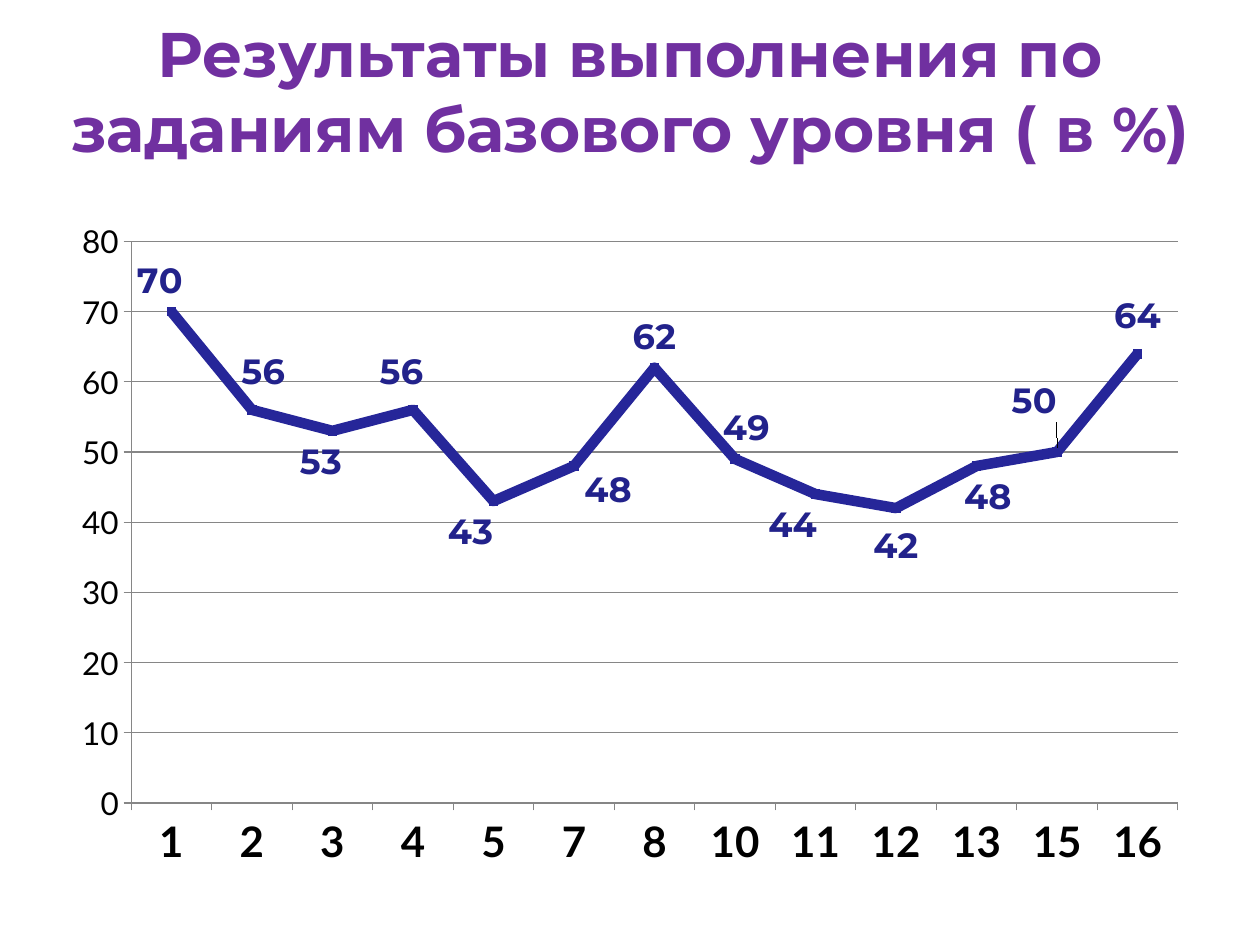
from lxml import etree
from pptx import Presentation
from pptx.chart.data import CategoryChartData
from pptx.dml.color import RGBColor
from pptx.enum.chart import XL_CHART_TYPE, XL_LABEL_POSITION, XL_TICK_MARK
from pptx.enum.text import MSO_ANCHOR, PP_ALIGN
from pptx.oxml.ns import qn
from pptx.util import Inches, Pt

LINE = XL_CHART_TYPE.LINE
ABOVE, BELOW = XL_LABEL_POSITION.ABOVE, XL_LABEL_POSITION.BELOW
OUTSIDE = XL_TICK_MARK.OUTSIDE
MIDDLE, CENTER = MSO_ANCHOR.MIDDLE, PP_ALIGN.CENTER
WIDE, HIGH = Inches(10), Inches(7.5)

TITLE = "Результаты выполнения по заданиям базового уровня ( в %)"
HEAD = {"name": "Montserrat", "size": Pt(36), "bold": True}
BASE = {"name": "Lato", "size": Pt(18), "bold": False}
TASK = {"name": "Lato", "size": Pt(24), "bold": True}
MARK = {"name": "Montserrat", "size": Pt(20), "bold": True}
PLOT = {"x": 0.063, "y": 0.05, "w": 0.917, "h": 0.837}

SCORES = [
    ("1", 70, ABOVE, -0.01, 0),
    ("2", 56, ABOVE, 0.01, -0.01),
    ("3", 53, BELOW, -0.01, 0),
    ("4", 56, ABOVE, -0.01, -0.01),
    ("5", 43, BELOW, -0.02, 0),
    ("7", 48, BELOW, 0.03, -0.01),
    ("8", 62, ABOVE, 0, 0),
    ("10", 49, ABOVE, 0.01, 0),
    ("11", 44, BELOW, -0.02, 0),
    ("12", 42, BELOW, 0, 0.01),
    ("13", 48, BELOW, 0.01, 0),
    ("15", 50, ABOVE, -0.02, -0.03),
    ("16", 64, ABOVE, 0, -0.01),
]


def paint(code):
    return RGBColor.from_string(code)


def style(font, form, code):
    for key, value in form.items():
        setattr(font, key, value)
    font.color.rgb = paint(code)


def share(x, y, w, h):
    return int(WIDE * x), int(HIGH * y), int(WIDE * w), int(HIGH * h)


def layout(values, inner=False):
    root = etree.Element(qn("c:layout"))
    manual = etree.SubElement(root, qn("c:manualLayout"))
    if inner:
        etree.SubElement(manual, qn("c:layoutTarget"), val="inner")
        for key in "xy":
            etree.SubElement(manual, qn(f"c:{key}Mode"), val="edge")
    for key, value in values.items():
        etree.SubElement(manual, qn(f"c:{key}"), val=str(value))
    return root


def add_title(slide, box):
    frame = slide.shapes.add_textbox(*box).text_frame
    frame.word_wrap = True
    frame.vertical_anchor = MIDDLE
    para = frame.paragraphs[0]
    para.alignment = CENTER
    run = para.add_run()
    run.text = TITLE
    style(run.font, HEAD, "7030A0")


def add_labels(series):
    for index, (_, _, side, x, y) in enumerate(SCORES):
        label = series.points[index].data_label
        style(label.font, MARK, "22228B")
        label.position = side
    for node, row in zip(series.data_labels._element.findall(qn("c:dLbl")), SCORES):
        node.find(qn("c:idx")).addnext(layout({"x": row[3], "y": row[4]}))


def add_graph(slide, box):
    data = CategoryChartData()
    data.categories = [row[0] for row in SCORES]
    data.add_series("Series 1", [row[1] for row in SCORES])
    chart = slide.shapes.add_chart(LINE, *box, data).chart
    chart.has_legend = chart.has_title = False
    style(chart.font, BASE, "000000")
    for axis, form in ((chart.category_axis, TASK), (chart.value_axis, BASE)):
        axis.major_tick_mark = OUTSIDE
        axis.format.line.color.rgb = paint("868686")
        style(axis.tick_labels.font, form, "000000")
    scale = chart.value_axis
    scale.minimum_scale, scale.maximum_scale, scale.major_unit = 0, 80, 10
    scale.major_gridlines.format.line.color.rgb = paint("868686")
    plot = chart.plots[0]
    plot.vary_by_categories = False
    series = plot.series[0]
    series.smooth = False
    series.marker.style = None
    series.format.line.color.rgb = paint("262699")
    series.format.line.width = Pt(6)
    add_labels(series)
    area = chart._chartSpace.find(".//" + qn("c:plotArea"))
    for node in area.findall(qn("c:layout")):
        area.remove(node)
    area.insert(0, layout(PLOT, True))


def main():
    deck = Presentation()
    deck.slide_width, deck.slide_height = WIDE, HIGH
    slide = deck.slides.add_slide(deck.slide_layouts[6])
    add_title(slide, share(0, 0.02, 1, 0.15))
    add_graph(slide, share(0.047, 0.22, 0.906, 0.71))
    deck.save("out.pptx")


if __name__ == "__main__":
    main()
